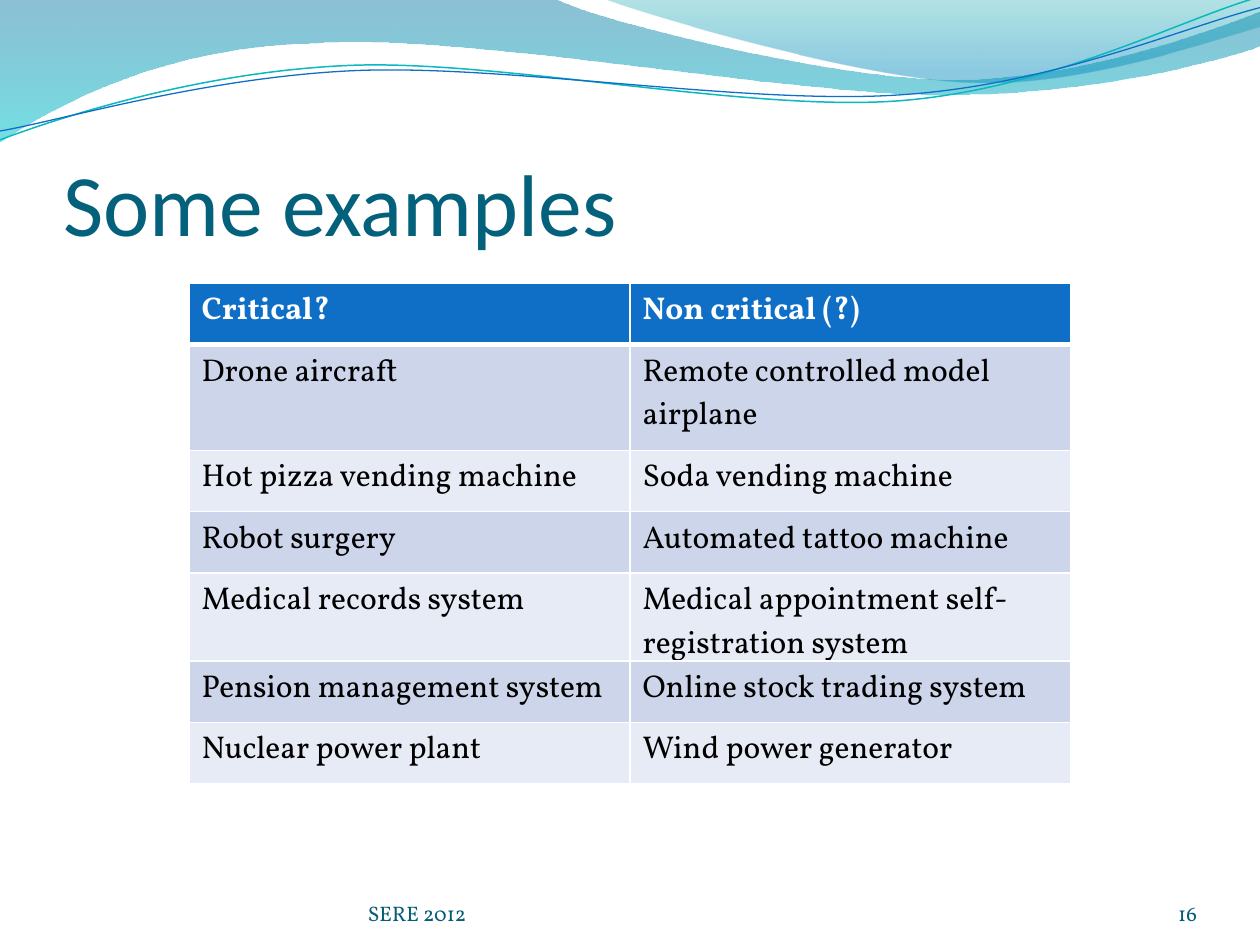
from math import cos, radians, sin

from lxml.etree import SubElement
from pptx import Presentation
from pptx.dml.color import RGBColor
from pptx.enum.text import MSO_ANCHOR as Anchor, PP_ALIGN as Align
from pptx.oxml.ns import qn
from pptx.util import Inches, Pt

COLORS = {
    "title": "04617B", "footer": "045D75", "header": "0F6FC6",
    "band_dark": "CCD5EA", "band_light": "E7EBF5",
    "white": "FFFFFF", "black": "000000",
    "deep_teal": "0074A1", "aqua": "00C6CF", "sea": "00A1A9", "sky": "008BBF",
    "teal_line": "0AB8BF", "blue_line": "0F6FC6",
}
BODY_FONT = "Vollkorn"
CURVE_TILT = 2.7
CURVE_CENTER = (4.99, 0.58)

EXAMPLES = [
    ("Critical?", "Non critical (?)"),
    ("Drone aircraft", "Remote controlled model airplane"),
    ("Hot pizza vending machine", "Soda vending machine"),
    ("Robot surgery", "Automated tattoo machine"),
    ("Medical records system", "Medical appointment self-registration system"),
    ("Pension management system", "Online stock trading system"),
    ("Nuclear power plant", "Wind power generator"),
]

LARGE_WAVE = [
    [(0, 0)], [(4.4, -0.01)],
    [(4.76, 0.17), (6.64, 0.63), (7.58, 0.63)],
    [(8.53, 0.63), (9.58, 0.26), (10, 0.09)],
    [(10.01, 0.36)],
    [(9.83, 0.44), (8.7, 0.76), (7.46, 0.75)],
    [(6.22, 0.75), (3.82, 0.28), (2.57, 0.34)],
    [(1.29, 0.36), (0.46, 0.83), (-0.01, 1.13)],
    [(0, 0)],
]
SMALL_WAVE = [
    [(4.79, -0.01)],
    [(5.09, 0.11), (6.82, 0.62), (7.69, 0.65)],
    [(8.56, 0.69), (9.61, 0.32), (10, 0.21)],
    [(10, 0)],
    [(4.79, -0.01)],
]
TEAL_CURVE = [
    [(0, 1.11)],
    [(0.48, 0.93), (1.58, 0.57), (2.77, 0.52)],
    [(3.95, 0.47), (5.93, 0.89), (7.13, 0.8)],
    [(8.33, 0.71), (9.38, 0.15), (9.98, -0.02)],
]
BLUE_CURVE = [
    [(0, 1.04)],
    [(0.47, 0.96), (1.64, 0.61), (2.83, 0.56)],
    [(4.03, 0.51), (5.97, 0.84), (7.17, 0.75)],
    [(8.36, 0.67), (9.41, 0.21), (10, 0.06)],
]


def color(name):
    return RGBColor.from_string(COLORS[name])


def level(point):
    angle = radians(CURVE_TILT)
    x, y = (value - middle for value, middle in zip(point, CURVE_CENTER))
    return (CURVE_CENTER[0] + x * cos(angle) - y * sin(angle),
            CURVE_CENTER[1] + x * sin(angle) + y * cos(angle))


def add_outline(shapes, outline, closed):
    start, *others = [(x * 1000, y * 1000) for segment in outline for x, y in segment]
    builder = shapes.build_freeform(*start, scale=Inches(1) / 1000)
    builder.add_line_segments(others, close=closed)
    shape = builder.convert_to_shape()
    shape.shadow.inherit = False
    lines = iter(list(shape._element.iter(qn("a:lnTo"))))
    for segment in outline[1:]:
        steps = [next(lines) for _ in segment]
        if len(steps) == 3:
            steps[0].tag = qn("a:cubicBezTo")
            for step in steps[1:]:
                steps[0].append(step[0])
                step.getparent().remove(step)
    return shape


def add_wave(page, outline, stops):
    shape = add_outline(page.shapes, outline, True)
    shape.line.fill.background()
    shape.fill.gradient()
    shape.fill.gradient_angle = 270
    for stop, (position, name, _) in zip(shape.fill.gradient_stops, stops):
        stop.position = position
        stop.color.rgb = color(name)
    tints = shape._element.spPr.iter(qn("a:srgbClr"))
    for tint, (_, _, opacity) in zip(tints, stops):
        SubElement(tint, qn("a:alpha"), val=str(opacity * 1000))


def add_curve(group, outline, name, width):
    leveled = [[level(point) for point in segment] for segment in outline]
    shape = add_outline(group.shapes, leveled, False)
    shape.rotation = 360 - CURVE_TILT
    shape.fill.background()
    shape.line.color.rgb = color(name)
    shape.line.width = Pt(width)


def write_text(frame, text, size, tint, font=BODY_FONT, bold=False, align=Align.LEFT):
    para = frame.paragraphs[0]
    para.alignment = align
    span = para.add_run()
    span.text = text
    span.font.name = font
    span.font.size = Pt(size)
    span.font.bold = bold
    span.font.color.rgb = color(tint)


def set_frame(frame, top=0):
    frame.word_wrap = True
    frame.vertical_anchor = Anchor.BOTTOM
    frame.margin_left = frame.margin_right = frame.margin_bottom = 0
    frame.margin_top = Inches(top)


def add_title(page, text):
    title = page.shapes.title
    title.left, title.top = Inches(0.5), Inches(0.77)
    title.width, title.height = Inches(9.08), Inches(1.25)
    set_frame(title.text_frame, top=0.05)
    write_text(title.text_frame, text, 50, "title", font="Calibri")


def add_footer(page, text, left, width, align):
    box = page.shapes.add_textbox(Inches(left), Inches(6.95), Inches(width), Inches(0.4))
    set_frame(box.text_frame)
    write_text(box.text_frame, text, 12, "footer", align=align)


def add_borders(cell, widths):
    properties = cell._tc.get_or_add_tcPr()
    for side, width in widths.items():
        line = SubElement(properties, qn(f"a:ln{side}"), w=str(Pt(width)))
        fill = SubElement(line, qn("a:solidFill"))
        SubElement(fill, qn("a:srgbClr"), val=COLORS["white"])


def add_examples(page):
    frame = page.shapes.add_table(len(EXAMPLES), 2, Inches(1.5), Inches(2.25),
                                  Inches(7), Inches(3.96))
    table = frame.table
    for index, texts in enumerate(EXAMPLES):
        header = index == 0
        band = "header" if header else ("band_light", "band_dark")[index % 2]
        table.rows[index].height = Inches(0.84) if index == 1 else Pt(35)
        for column, text in enumerate(texts):
            cell = table.cell(index, column)
            add_borders(cell, {"L": 1, "R": 1, "T": 3 if index == 1 else 1,
                               "B": 3 if header else 1})
            cell.fill.solid()
            cell.fill.fore_color.rgb = color(band)
            write_text(cell.text_frame, text, 18, "white" if header else "black",
                       bold=header)
    frame.height = Inches(3.96)


def main():
    deck = Presentation()
    deck.slide_width, deck.slide_height = Inches(10), Inches(7.5)
    page = deck.slides.add_slide(deck.slide_layouts[5])
    add_wave(page, LARGE_WAVE, [(0, "deep_teal", 45), (1, "aqua", 55)])
    add_wave(page, SMALL_WAVE, [(0, "sea", 30), (0.8, "sky", 45)])
    curves = page.shapes.add_group_shape()
    add_curve(curves, TEAL_CURVE, "teal_line", 0.85)
    add_curve(curves, BLUE_CURVE, "blue_line", 0.75)
    add_title(page, "Some examples")
    add_footer(page, "SERE 2012", 2.92, 3.67, Align.LEFT)
    add_footer(page, "16", 8.67, 0.83, Align.RIGHT)
    add_examples(page)
    deck.save("out.pptx")


if __name__ == "__main__":
    main()
